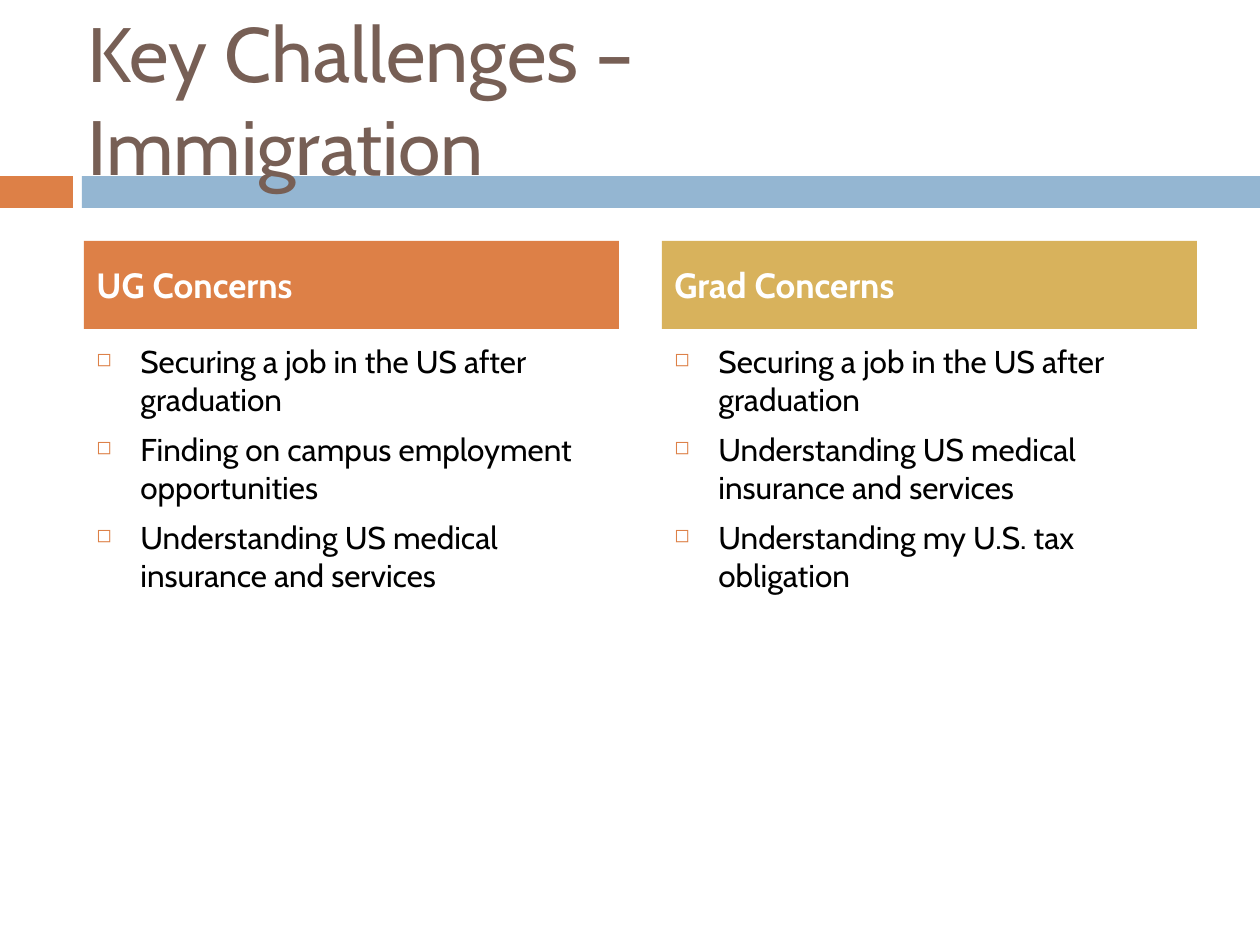
from lxml import etree
from pptx import Presentation
from pptx.dml.color import RGBColor
from pptx.enum.shapes import MSO_SHAPE
from pptx.enum.text import MSO_ANCHOR, PP_ALIGN
from pptx.oxml.ns import qn
from pptx.util import Pt

PX = 914400 // 126  # EMU in one px
RECTANGLE = MSO_SHAPE.RECTANGLE
MIDDLE, TOP = MSO_ANCHOR.MIDDLE, MSO_ANCHOR.TOP
LEFT = PP_ALIGN.LEFT

FONT = "Cabin"
ORANGE = RGBColor(0xDD, 0x80, 0x47)
BLUE = RGBColor(0x94, 0xB6, 0xD2)
GOLD = RGBColor(0xD8, 0xB2, 0x5C)
BROWN = RGBColor(0x77, 0x5F, 0x55)
WHITE = RGBColor(0xFF, 0xFF, 0xFF)
BLACK = RGBColor(0, 0, 0)

COLUMNS = [
    ("UG Concerns", ORANGE, [
        "Securing a job in the US after graduation",
        "Finding on campus employment opportunities",
        "Understanding US medical insurance and services",
    ]),
    ("Grad Concerns", GOLD, [
        "Securing a job in the US after graduation",
        "Understanding US medical insurance and services",
        "Understanding my U.S. tax obligation",
    ]),
]


def add_block(slide, left, top, width, height, color):
    shape = slide.shapes.add_shape(
        RECTANGLE, left * PX, top * PX, width * PX, height * PX)
    shape.shadow.inherit = False
    shape.fill.solid()
    shape.fill.fore_color.rgb = color
    shape.line.fill.background()
    return shape


def add_text_box(slide, left, top, width, height):
    return slide.shapes.add_textbox(
        left * PX, top * PX, width * PX, height * PX)


def add_bullet(paragraph):
    properties = paragraph._p.get_or_add_pPr()
    properties.set("marL", str(44 * PX))
    properties.set("indent", str(-44 * PX))
    color = etree.SubElement(properties, qn("a:buClr"))
    etree.SubElement(color, qn("a:srgbClr"), val=str(ORANGE))
    etree.SubElement(properties, qn("a:buSzPct"), val="60000")
    etree.SubElement(properties, qn("a:buChar"), char="◻")


def write_text(shape, texts, size, color, anchor, bold=False, bullets=False):
    frame = shape.text_frame
    frame.word_wrap = True
    frame.vertical_anchor = anchor
    for index, text in enumerate(texts):
        paragraph = frame.add_paragraph() if index else frame.paragraphs[0]
        paragraph.text = text
        paragraph.alignment = LEFT
        if index:
            paragraph.space_before = Pt(7)
        if bullets:
            add_bullet(paragraph)
        font = paragraph.font
        font.name, font.size, font.bold = FONT, Pt(size), bold
        font.color.rgb = color


def add_band(slide, left, top, width, height):
    """Orange tab, a small gap, and the long blue bar."""
    tab, gap = 73, 9
    add_block(slide, left, top, tab, height, ORANGE)
    add_block(slide, left + tab + gap, top, width - tab - gap, height, BLUE)


def add_title(slide, left, top, width, height):
    title = add_text_box(slide, left, top, width, height)
    write_text(title, ["Key Challenges –\vImmigration"], 44, BROWN, MIDDLE)


def add_column(slide, left, top, width, height, heading, color, items):
    """Coloured heading above a bulleted list."""
    heading_height, gap = 88, 7
    header = add_block(slide, left, top, width, heading_height, color)
    write_text(header, [heading], 20, WHITE, MIDDLE, bold=True)
    offset = heading_height + gap
    body = add_text_box(slide, left, top + offset, width, height - offset)
    write_text(body, items, 18, BLACK, TOP, bullets=True)


def main():
    presentation = Presentation()
    presentation.slide_width = 1260 * PX
    presentation.slide_height = 945 * PX
    slide = presentation.slides.add_slide(presentation.slide_layouts[6])

    add_band(slide, 0, 176, 1260, 32)
    add_title(slide, 75, 38, 1122, 120)
    column_width, column_gap = 535, 43
    for index, column in enumerate(COLUMNS):
        left = 84 + index * (column_width + column_gap)
        add_column(slide, left, 241, column_width, 589, *column)

    presentation.save("out.pptx")


if __name__ == "__main__":
    main()
